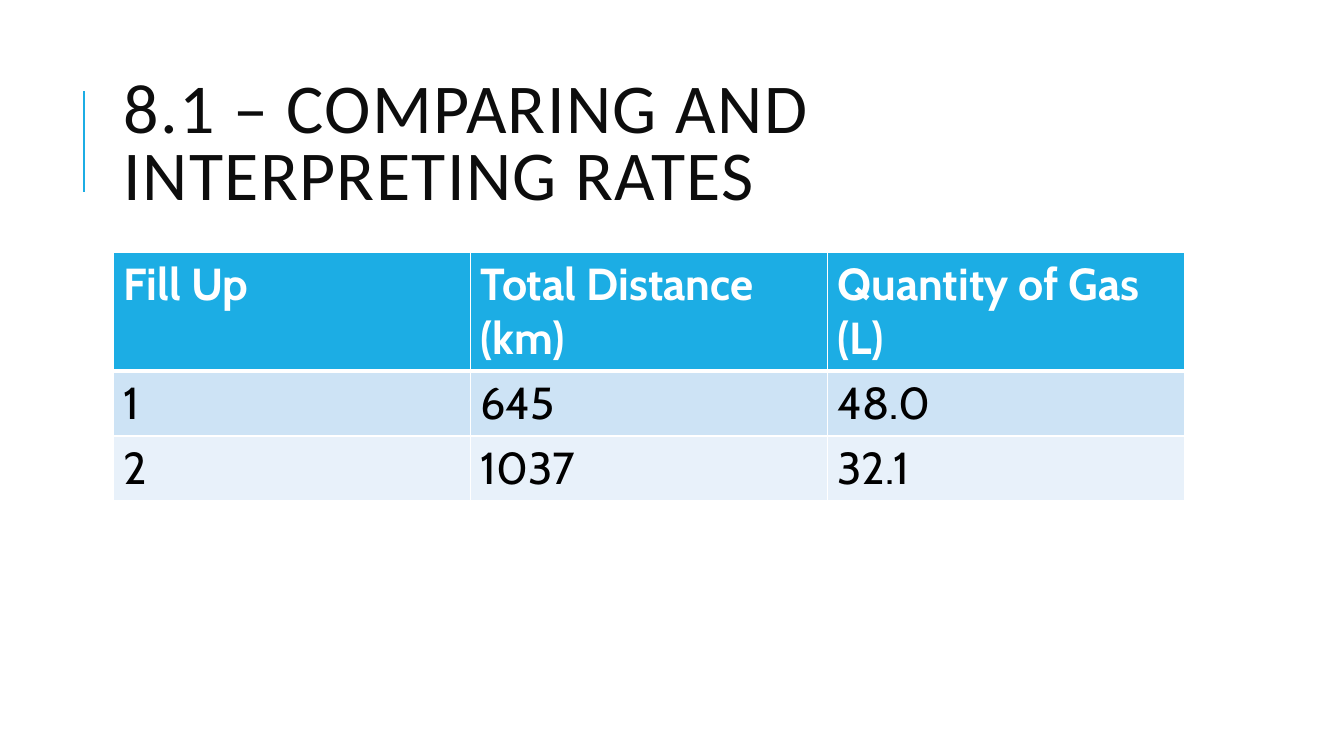
from dataclasses import dataclass

from lxml.etree import SubElement as Sub
from pptx import Presentation
from pptx.dml.color import RGBColor as Rgb
from pptx.enum.shapes import MSO_CONNECTOR as Link
from pptx.enum.text import MSO_ANCHOR as Anchor, MSO_AUTO_SIZE as Fit, PP_ALIGN as Align
from pptx.oxml.ns import qn
from pptx.util import Pt


@dataclass(frozen=True)
class Theme:
    """Colours, fonts and type sizes of the slide."""
    accent: str = "1CADE4"
    ink: str = "0D0D0D"
    text: str = "000000"
    white: str = "FFFFFF"
    bands: tuple = ("CDE3F5", "E8F1FA")
    head: str = "Calibri"
    body: str = "Cabin"
    big: int = 50
    cell: int = 32


THEME = Theme()
LEFT, WIDTH = 81, 765
RATES = [
    ("Fill Up", "Total Distance (km)", "Quantity of Gas (L)"),
    ("1", "645", "48.0"),
    ("2", "1037", "32.1"),
]


def style(font, name, size, color, bold=False):
    """Set the face, size, colour and weight of a font."""
    font.name, font.size, font.bold = name, Pt(size), bold
    font.color.rgb = Rgb.from_string(color)


def set_title(slide, text):
    """Place and format the title placeholder."""
    title = slide.shapes.title
    title.left, title.top = Pt(LEFT), Pt(46)
    title.width, title.height = Pt(WIDTH), Pt(118)
    frame = title.text_frame
    frame.text = text
    frame.word_wrap, frame.auto_size = True, Fit.NONE
    frame.vertical_anchor = Anchor.MIDDLE
    para = frame.paragraphs[0]
    para.alignment, para.line_spacing = Align.LEFT, 0.8
    style(para.font, THEME.head, THEME.big, THEME.ink)
    para.runs[0].font._element.set("spc", "100")


def add_rule(slide, x, top, end):
    """Draw the upright accent line beside the title."""
    rule = slide.shapes.add_connector(Link.STRAIGHT, Pt(x), Pt(end), Pt(x), Pt(top))
    rule.line.color.rgb = Rgb.from_string(THEME.accent)
    rule.line.width = Pt(1.5)
    Sub(rule._element.spPr, qn("a:effectLst"))


def add_edge(cell, side, width):
    """Give one side of a cell a white border."""
    props = cell._tc.get_or_add_tcPr()
    edge = Sub(props, qn(f"a:ln{side}"), w=str(Pt(width)))
    fill = Sub(edge, qn("a:solidFill"))
    Sub(fill, qn("a:srgbClr"), val=THEME.white)


def fill_cell(cell, text, row):
    """Write and format one table cell according to its row."""
    head = row == 0
    cell.text = text
    color = THEME.white if head else THEME.text
    style(cell.text_frame.paragraphs[0].font, THEME.body, THEME.cell, color, head)
    for side in "LRTB":
        thick = (row, side) in ((0, "B"), (1, "T"))
        add_edge(cell, side, 3 if thick else 1)
    back = THEME.accent if head else THEME.bands[(row - 1) % 2]
    cell.fill.solid()
    cell.fill.fore_color.rgb = Rgb.from_string(back)


def add_grid(slide, rows, top, height):
    """Add a table with equal columns and a header row."""
    frame = slide.shapes.add_table(
        len(rows), len(rows[0]), Pt(LEFT), Pt(top), Pt(WIDTH), Pt(height * len(rows)))
    for row, texts in enumerate(rows):
        for col, text in enumerate(texts):
            fill_cell(frame.table.cell(row, col), text, row)


def main():
    """Build and save the slide."""
    deck = Presentation()
    deck.slide_width, deck.slide_height = Pt(960), Pt(540)
    slide = deck.slides.add_slide(deck.slide_layouts[5])
    set_title(slide, "8.1 – COMPARING AND INTERPRETING RATES")
    add_rule(slide, 60, 65, 137)
    add_grid(slide, RATES, 180, 29.5)
    deck.save("out.pptx")


if __name__ == "__main__":
    main()
